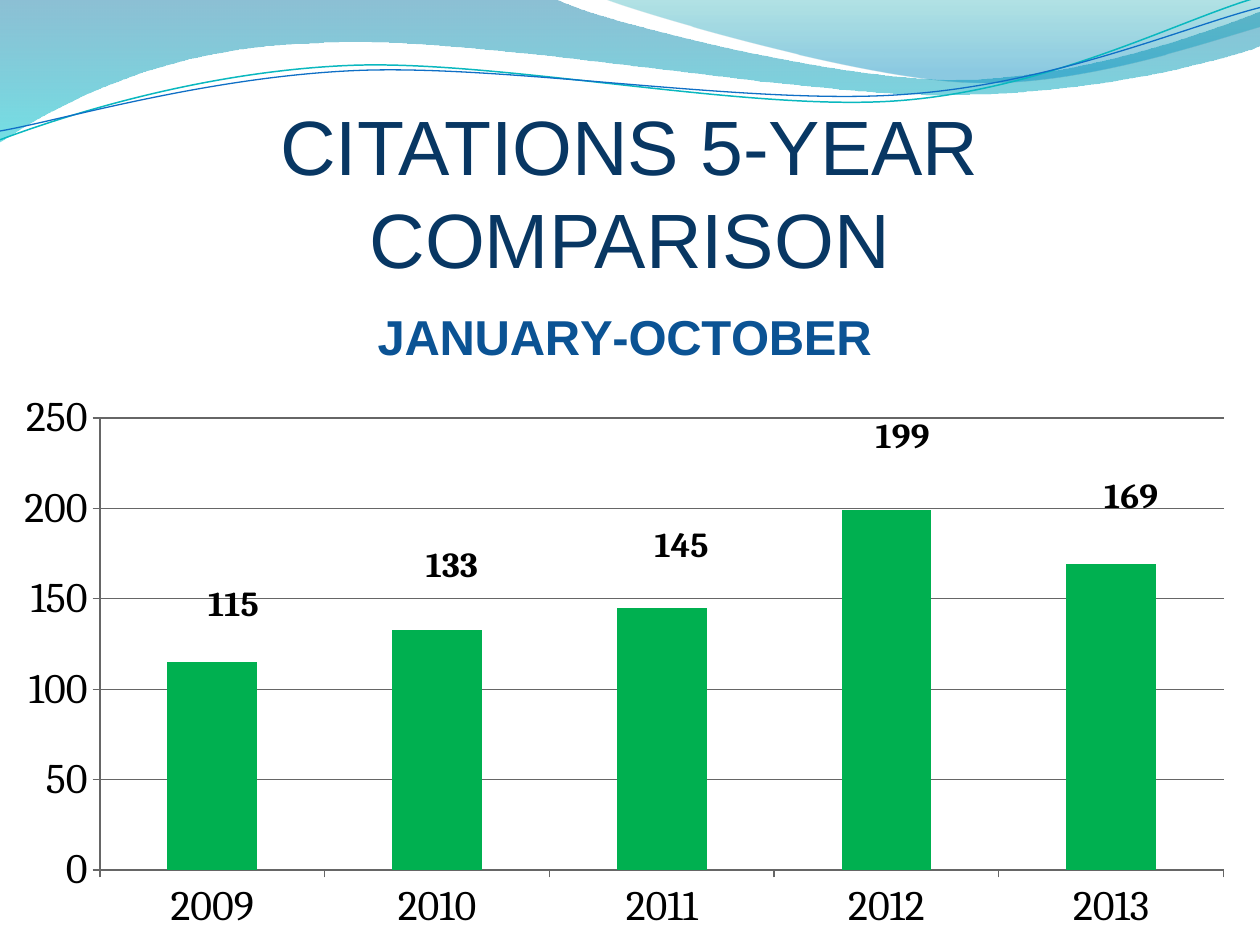
from pptx import Presentation, util as u
from pptx.chart.data import CategoryChartData
from pptx.dml.color import RGBColor
from pptx.enum import chart as ch, text
from pptx.oxml import parse_xml
from pptx.oxml.ns import nsdecls, qn

INCH = 2.54
UNITS = 1000  # outline units per inch


def cm(inches):
    return u.Cm(inches * INCH)


def color(hex_text):
    return RGBColor.from_string(hex_text)


def style_font(font, size, name, fill="000000", bold=False):
    font.size, font.name, font.bold = u.Pt(size), name, bold
    font.color.rgb = color(fill)


def add_text(tf, content, align=text.PP_ALIGN.CENTER, **fmt):
    p = tf.paragraphs[0]
    p.alignment = align
    for i, line in enumerate(content.split("\n")):
        if i:
            p.add_line_break()
        r = p.add_run()
        r.text = line
        style_font(r.font, **fmt)


def layout(mode="", **percents):
    """Manual chart layout, in percent of the chart."""
    target = '<c:layoutTarget val="inner"/>' if "w" in percents else ""
    modes = "".join(f'<c:{a}Mode val="{mode}"/>' for a in "xy") if mode else ""
    nums = "".join(f'<c:{k} val="{v / 100:.4f}"/>' for k, v in percents.items())
    return parse_xml(f'<c:layout {nsdecls("c")}><c:manualLayout>{target}{modes}{nums}'
                     '</c:manualLayout></c:layout>')


def set_layout(parent, new, after=None):
    for old in parent.findall(qn("c:layout")):
        parent.remove(old)
    if after is None:
        parent.insert(0, new)
    else:
        parent.find(qn(after)).addnext(new)


class Deck:
    heading, body = "Arial", "Cambria"
    navy, blue, green, grey = "083763", "0B5394", "00B050", "666666"

    def __init__(self):
        self.prs = Presentation()
        self.prs.slide_width, self.prs.slide_height = cm(10), cm(7.5)
        self.s = self.prs.slides.add_slide(self.prs.slide_layouts[6])

    def freeform(self, start, segments, closed):
        """Segments of one point are straight, those of three points are curves."""
        pts = [(x * UNITS, y * UNITS) for seg in segments for x, y in zip(seg[::2], seg[1::2])]
        fb = self.s.shapes.build_freeform(start[0] * UNITS, start[1] * UNITS,
                                          scale=cm(1) / UNITS)
        fb.add_line_segments(pts, close=closed)
        sp = fb.convert_to_shape()
        sp.shadow.inherit = False
        lines = iter(list(sp._element.iter(qn("a:lnTo"))))
        for seg in segments:
            first = next(lines)
            if len(seg) == 6:
                bez = parse_xml(f'<a:cubicBezTo {nsdecls("a")}/>')
                first.addprevious(bez)
                for line in (first, next(lines), next(lines)):
                    bez.append(line[0])
                    line.getparent().remove(line)
        return sp

    def wave(self, start, *segments, stops):
        sp = self.freeform(start, segments, True)
        sp.line.fill.background()
        sp.fill.gradient()
        grad = sp._element.spPr.find(qn("a:gradFill"))
        gs = "".join(f'<a:gs pos="{pos * 1000}"><a:srgbClr val="{c}">'
                     f'<a:alpha val="{alpha * 1000}"/></a:srgbClr></a:gs>'
                     for pos, c, alpha in stops)
        new = parse_xml(f'<a:gradFill {nsdecls("a")} rotWithShape="1"><a:gsLst>{gs}</a:gsLst>'
                        '<a:lin ang="5400000" scaled="0"/></a:gradFill>')
        grad.getparent().replace(grad, new)

    def curve(self, start, *segments, stroke, width):
        sp = self.freeform(start, segments, False)
        sp.fill.background()
        sp.line.color.rgb, sp.line.width = color(stroke), u.Pt(width)

    def title(self, content, x, y, w, h):
        tf = self.s.shapes.add_textbox(cm(x), cm(y), cm(w), cm(h)).text_frame
        tf.word_wrap = True
        tf.vertical_anchor = text.MSO_ANCHOR.BOTTOM
        tf.margin_left = tf.margin_right = tf.margin_bottom = 0
        add_text(tf, content, size=44, name=self.heading, fill=self.navy)

    def column_chart(self, heading, values, label_shifts, x, y, w, h):
        data = CategoryChartData()
        data.categories = list(values)
        data.add_series("Series 1", values.values())
        chart = self.s.shapes.add_chart(ch.XL_CHART_TYPE.COLUMN_STACKED, cm(x), cm(y),
                                        cm(w), cm(h), data).chart
        style_font(chart.font, 10, self.body)
        chart.has_legend = False

        # Heading and plot area
        chart.has_title = True
        add_text(chart.chart_title.text_frame, heading, size=28, name=self.heading,
                 fill=self.blue, bold=True)
        chart.chart_title.include_in_layout = False
        set_layout(chart.chart_title._element, layout("edge", x=29.5, y=3), "c:tx")
        plot_area = chart._chartSpace.chart.plotArea
        set_layout(plot_area, layout("edge", x=8, y=21.1, w=89.9, h=67.7))

        # Axes
        for axis in (chart.category_axis, chart.value_axis):
            style_font(axis.tick_labels.font, 24, self.body)
            axis.major_tick_mark = ch.XL_TICK_MARK.OUTSIDE
            axis.format.line.color.rgb = color(self.grey)
        axis.minimum_scale, axis.maximum_scale, axis.major_unit = 0, 250, 50
        axis.has_major_gridlines = True
        axis.major_gridlines.format.line.color.rgb = color(self.grey)

        # Columns, with their labels raised above them
        plot = chart.plots[0]
        plot.gap_width, plot.overlap, plot.vary_by_categories = 150, 100, False
        ser = plot.series[0]
        ser.format.fill.solid()
        ser.format.fill.fore_color.rgb = color(self.green)
        style_font(ser.data_labels.font, 20, self.body, bold=True)
        ser.data_labels.show_value = True
        for i in range(len(values)):
            style_font(ser.points[i].data_label.font, 20, self.body, bold=True)
        for label, (dx, rise) in zip(ser._element.iter(qn("c:dLbl")), label_shifts):
            set_layout(label, layout(x=dx, y=-rise), "c:idx")
        for leader in ser._element.iter(qn("c:showLeaderLines")):
            leader.set("val", "0")


def main():
    deck = Deck()

    # Waves along the top
    deck.wave((0, 0), (4.4, -0.01), (4.76, 0.17, 6.64, 0.63, 7.58, 0.63),
              (8.53, 0.63, 9.58, 0.26, 10, 0.09), (10.01, 0.36),
              (9.83, 0.44, 8.7, 0.76, 7.46, 0.75), (6.22, 0.75, 3.82, 0.28, 2.57, 0.34),
              (1.29, 0.36, 0.46, 0.83, -0.01, 1.13),
              stops=[(0, "0074A1", 45), (100, "00C6CF", 55)])
    deck.wave((4.79, -0.01), (5.09, 0.11, 6.82, 0.62, 7.69, 0.65),
              (8.56, 0.69, 9.61, 0.32, 10, 0.21), (10, 0),
              stops=[(0, "00A1A9", 30), (80, "008BBF", 45)])
    deck.curve((0, 1.11), (0.48, 0.93, 1.58, 0.57, 2.77, 0.52),
               (3.95, 0.47, 5.93, 0.89, 7.13, 0.8), (8.33, 0.71, 9.38, 0.15, 9.98, -0.02),
               stroke="0AB8BF", width=0.85)
    deck.curve((0, 1.04), (0.47, 0.96, 1.64, 0.61, 2.83, 0.56),
               (4.03, 0.51, 5.97, 0.84, 7.17, 0.75), (8.36, 0.67, 9.41, 0.21, 10, 0.06),
               stroke="0F6FC6", width=0.75)

    # Title and chart
    deck.title("CITATIONS 5-YEAR\nCOMPARISON", 0.5, 1, 9, 1.25)
    citations = {"2009": 115, "2010": 133, "2011": 145, "2012": 199, "2013": 169}
    shifts = [(1.7, 24.1), (1.2, 27.5), (1.6, 28.8), (1.3, 37.9), (1.6, 33)]
    deck.column_chart("JANUARY-OCTOBER", citations, shifts, 0, 2.2, 9.92, 5.3)
    deck.prs.save("out.pptx")


if __name__ == "__main__":
    main()
